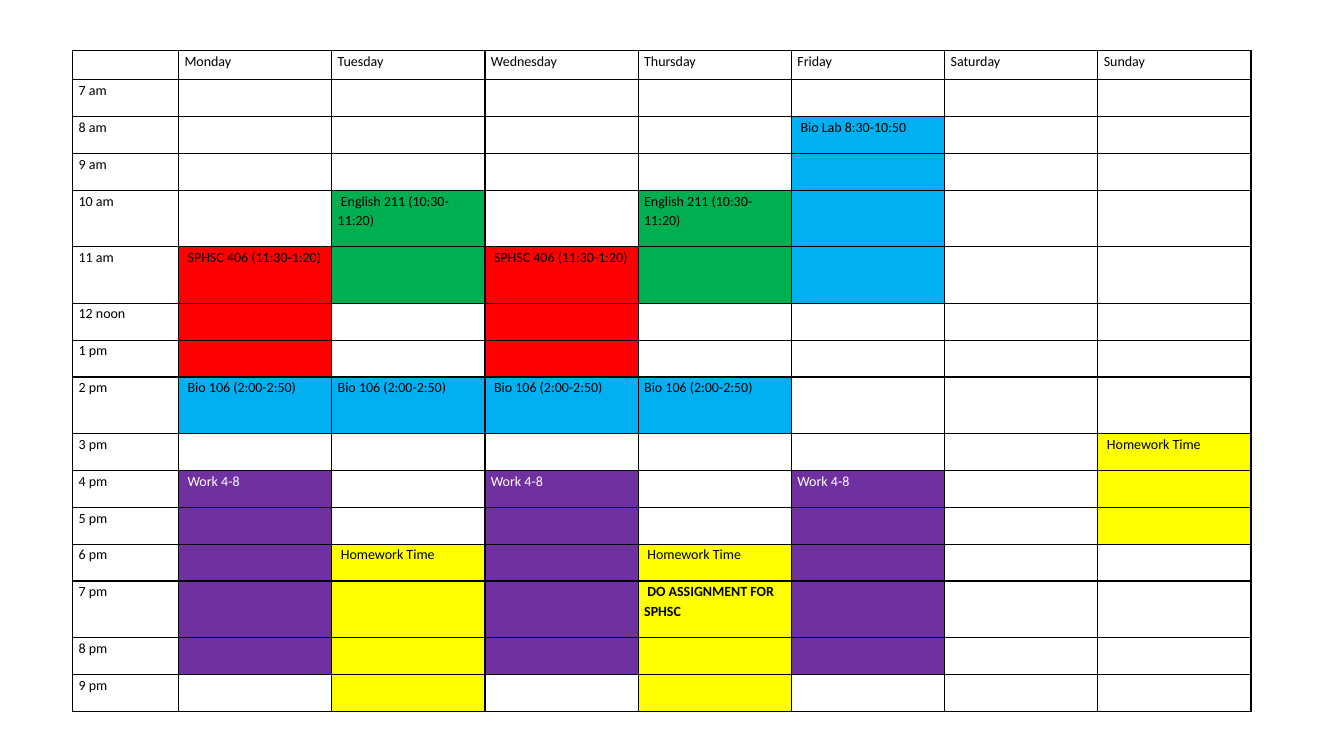
from dataclasses import dataclass

from lxml import etree
from pptx import Presentation
from pptx.dml.color import RGBColor as Rgb
from pptx.oxml.ns import qn
from pptx.util import Inches, Pt


@dataclass(frozen=True)
class Theme:
    font: str = "Calibri"
    size: int = 10
    black: str = "000000"
    white: str = "FFFFFF"
    blue: str = "00B0F0"
    green: str = "00B050"
    red: str = "FF0000"
    purple: str = "7030A0"
    yellow: str = "FFFF00"


THEME = Theme()
DAYS = ["Monday", "Tuesday", "Wednesday", "Thursday", "Friday", "Saturday", "Sunday"]
HOURS = ["7 am", "8 am", "9 am", "10 am", "11 am", "12 noon", "1 pm", "2 pm",
         "3 pm", "4 pm", "5 pm", "6 pm", "7 pm", "8 pm", "9 pm"]
TALL = ["10 am", "11 am", "2 pm", "7 pm"]

# Day, first hour, number of hours, fill, label
EVENTS = [
    ("Monday", "11 am", 3, THEME.red, " SPHSC 406 (11:30-1:20)"),
    ("Monday", "2 pm", 1, THEME.blue, " Bio 106 (2:00-2:50)"),
    ("Monday", "4 pm", 5, THEME.purple, " Work 4-8"),
    ("Tuesday", "10 am", 2, THEME.green, " English 211 (10:30-11:20)"),
    ("Tuesday", "2 pm", 1, THEME.blue, "Bio 106 (2:00-2:50)"),
    ("Tuesday", "6 pm", 4, THEME.yellow, " Homework Time"),
    ("Wednesday", "11 am", 3, THEME.red, " SPHSC 406 (11:30-1:20)"),
    ("Wednesday", "2 pm", 1, THEME.blue, " Bio 106 (2:00-2:50)"),
    ("Wednesday", "4 pm", 5, THEME.purple, "Work 4-8"),
    ("Thursday", "10 am", 2, THEME.green, "English 211 (10:30-11:20)"),
    ("Thursday", "2 pm", 1, THEME.blue, "Bio 106 (2:00-2:50)"),
    ("Thursday", "6 pm", 4, THEME.yellow, " Homework Time"),
    ("Friday", "8 am", 4, THEME.blue, " Bio Lab 8:30-10:50"),
    ("Friday", "4 pm", 5, THEME.purple, "Work 4-8 "),
    ("Sunday", "3 pm", 3, THEME.yellow, " Homework Time "),
]
TASK = ("Thursday", "7 pm", " DO ASSIGNMENT FOR SPHSC ")


def add_edges(cell):
    """Draw a thin black line on all four sides of a cell."""
    props = cell._tc.get_or_add_tcPr()
    for spot, side in enumerate(("lnL", "lnR", "lnT", "lnB")):
        line = etree.Element(qn(f"a:{side}"), w=str(Pt(1)))
        fill = etree.SubElement(line, qn("a:solidFill"))
        etree.SubElement(fill, qn("a:srgbClr"), val=THEME.black)
        props.insert(spot, line)


def set_cell(cell, text="", fill=THEME.white, bold=False):
    cell.fill.solid()
    cell.fill.fore_color.rgb = Rgb.from_string(fill)
    cell.margin_left = cell.margin_right = Inches(0.06)
    cell.margin_top = cell.margin_bottom = 0
    cell.text = text
    para = cell.text_frame.paragraphs[0]
    para.line_spacing = 1.15
    font = para.font
    font.name, font.size, font.bold = THEME.font, Pt(THEME.size), bold
    ink = THEME.white if fill == THEME.purple else THEME.black
    font.color.rgb = Rgb.from_string(ink)


def add_week(slide, left, top, width, height):
    """Place the weekly timetable in the given box, in inches."""
    frame = slide.shapes.add_table(len(HOURS) + 1, len(DAYS) + 1, Inches(left),
                                   Inches(top), Inches(width), Inches(height))
    table = frame.table
    table.first_row = table.horz_banding = False

    # Column widths and row heights
    side, head, tall = 1.05, 0.29, 0.56
    day_w = (width - side) / len(DAYS)
    hour_h = (height - head - tall * len(TALL)) / (len(HOURS) - len(TALL))
    for col, size in zip(table.columns, [side] + [day_w] * len(DAYS)):
        col.width = Inches(size)
    sizes = [head] + [tall if hour in TALL else hour_h for hour in HOURS]
    for row, size in zip(table.rows, sizes):
        row.height = Inches(size)

    # Empty grid
    for cell in table.iter_cells():
        set_cell(cell)
        add_edges(cell)

    # Day and hour labels
    for col, day in enumerate(DAYS, 1):
        set_cell(table.cell(0, col), day)
    for row, hour in enumerate(HOURS, 1):
        set_cell(table.cell(row, 0), hour)

    # Events, with the label in the first hour
    for day, hour, count, fill, label in EVENTS:
        row, col = HOURS.index(hour) + 1, DAYS.index(day) + 1
        for step in range(count):
            set_cell(table.cell(row + step, col), "" if step else label, fill)

    # Reminder within homework time
    day, hour, label = TASK
    cell = table.cell(HOURS.index(hour) + 1, DAYS.index(day) + 1)
    set_cell(cell, label, THEME.yellow, bold=True)


def main():
    deck = Presentation()
    deck.slide_width, deck.slide_height = Inches(13.33), Inches(7.5)
    slide = deck.slides.add_slide(deck.slide_layouts[6])
    add_week(slide, 0.72, 0.5, 11.69, 6.56)
    deck.save("out.pptx")


if __name__ == "__main__":
    main()
